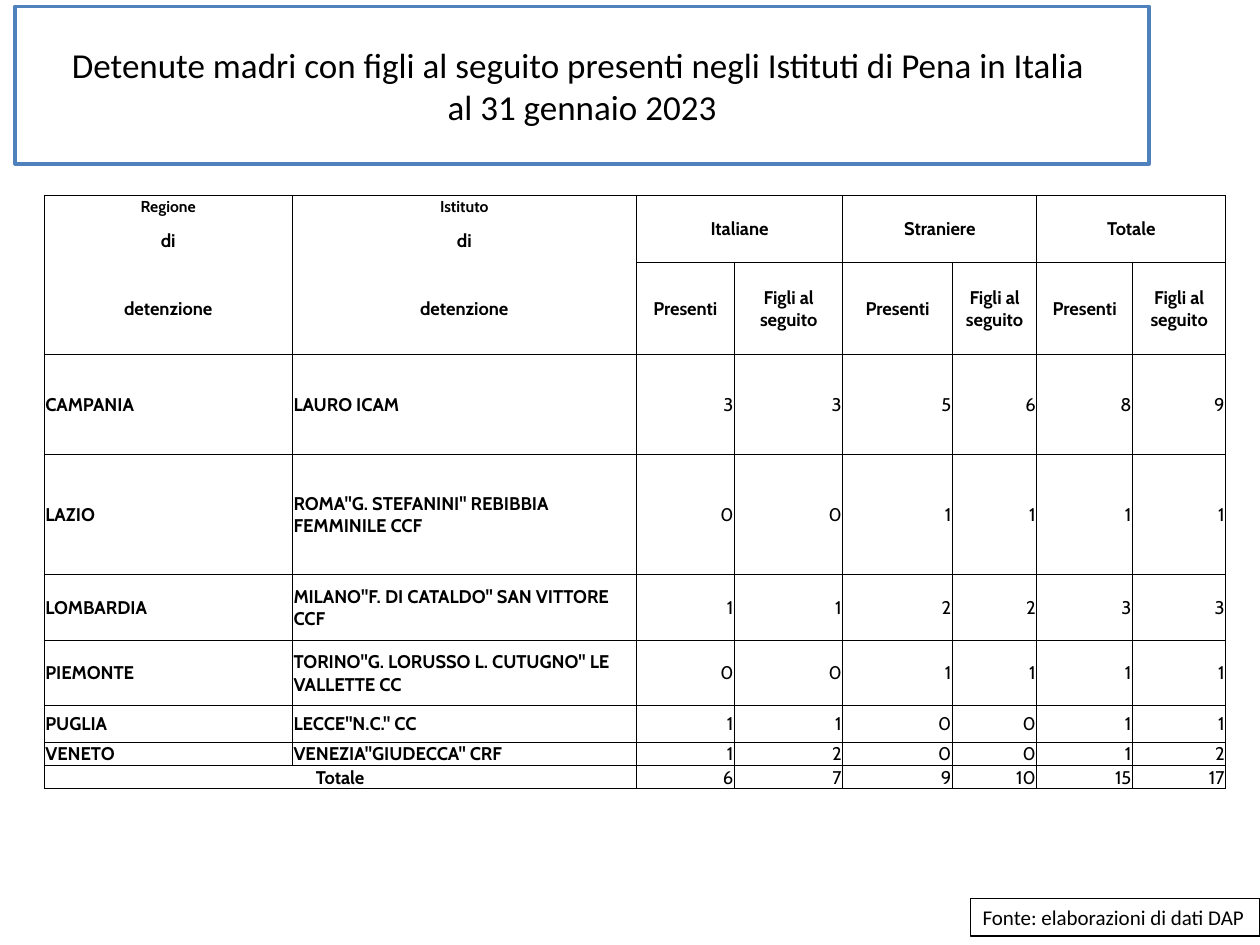
from typing import NamedTuple

from lxml import etree
from pptx import Presentation, util as u
from pptx.dml.color import RGBColor
from pptx.enum import text as t
from pptx.oxml import ns

LEFT, MID, RIGHT = t.PP_ALIGN.LEFT, t.PP_ALIGN.CENTER, t.PP_ALIGN.RIGHT
BLACK, WHITE, BLUE = "000000", "FFFFFF", "4F81BD"


class Box(NamedTuple):
    left: float
    top: float
    width: float
    height: float


class Prison(NamedTuple):
    region: str
    name: str
    counts: tuple


COLS = [1.97, 2.73, 0.78, 0.86, 0.87, 0.67, 0.76, 0.74]
ROWS = [0.18, 0.35, 0.73, 0.8, 0.95, 0.52, 0.52, 0.29, 0.18, 0.18]
GROUPS = ["Italiane", "Straniere", "Totale"]
PRISONS = [
    Prison("CAMPANIA", "LAURO ICAM", (3, 3, 5, 6, 8, 9)),
    Prison("LAZIO", 'ROMA"G. STEFANINI" REBIBBIA FEMMINILE CCF', (0, 0, 1, 1, 1, 1)),
    Prison("LOMBARDIA", 'MILANO"F. DI CATALDO" SAN VITTORE CCF', (1, 1, 2, 2, 3, 3)),
    Prison("PIEMONTE", 'TORINO"G. LORUSSO L. CUTUGNO" LE VALLETTE CC', (0, 0, 1, 1, 1, 1)),
    Prison("PUGLIA", 'LECCE"N.C." CC', (1, 1, 0, 0, 1, 1)),
    Prison("VENETO", 'VENEZIA"GIUDECCA" CRF', (1, 2, 0, 0, 1, 2)),
]
TOTALS = (6, 7, 9, 10, 15, 17)


def color(code: str) -> RGBColor:
    return RGBColor.from_string(code)


def write(frame, words: str, *, size: float, font: str = "Cabin",
          bold: bool = False, align=LEFT) -> None:
    para = frame.paragraphs[0]
    para.text = words
    para.alignment = align
    for run in para.runs:
        run.font.name = font
        run.font.size = u.Pt(size)
        run.font.bold = bold
        run.font.color.rgb = color(BLACK)


def panel(slide, box: Box, words: str, *, line: str, weight: float,
          wrap: bool, anchor, **style) -> None:
    shape = slide.shapes.add_textbox(*map(u.Inches, box))
    shape.fill.solid()
    shape.fill.fore_color.rgb = color(WHITE)
    shape.line.color.rgb = color(line)
    shape.line.width = u.Pt(weight)
    frame = shape.text_frame
    frame.word_wrap = wrap
    frame.vertical_anchor = anchor
    write(frame, words, font="Calibri", **style)


def border(cell, sides: str) -> None:
    props = cell._tc.get_or_add_tcPr()
    for side in "LRTB":
        line = etree.SubElement(props, ns.qn(f"a:ln{side}"), w=str(u.Pt(0.5)))
        if side in sides:
            fill = etree.SubElement(line, ns.qn("a:solidFill"))
            etree.SubElement(fill, ns.qn("a:srgbClr"), val=BLACK)
        else:
            etree.SubElement(line, ns.qn("a:noFill"))


def put(cell, words, *, size: float = 10.5, **style) -> None:
    write(cell.text_frame, str(words), size=size, **style)


def grid(slide, box: Box) -> None:
    frame = slide.shapes.add_table(len(ROWS), len(COLS), *map(u.Inches, box))
    table = frame.table
    table.first_row = table.horz_banding = False
    for col, width in zip(table.columns, COLS):
        col.width = u.Inches(width)
    for row, height in zip(table.rows, ROWS):
        row.height = u.Inches(height)

    # Borders and margins; the two stacked headings have no inner rules
    stack = ["LRT", "LR", "LRB"]
    for i in range(len(ROWS)):
        for j in range(len(COLS)):
            cell = table.cell(i, j)
            border(cell, stack[i] if i < 3 and j < 2 else "LRTB")
            cell.fill.background()
            cell.vertical_anchor = t.MSO_ANCHOR.MIDDLE
            cell.margin_left = cell.margin_right = u.Inches(0.01)
            cell.margin_top, cell.margin_bottom = u.Inches(0.01), 0

    # Headings
    for j, head in enumerate(["Regione", "Istituto"]):
        put(table.cell(0, j), head, size=9, bold=True, align=MID)
        for i, word in enumerate(["di", "detenzione"], 1):
            put(table.cell(i, j), word, bold=True, align=MID)
    for j, group in zip(range(2, len(COLS), 2), GROUPS):
        table.cell(0, j).merge(table.cell(1, j + 1))
        put(table.cell(0, j), group, bold=True, align=MID)
        for k, word in enumerate(["Presenti", "Figli al seguito"]):
            put(table.cell(2, j + k), word, bold=True, align=MID)

    # Prisons and totals
    for i, prison in enumerate(PRISONS, 3):
        put(table.cell(i, 0), prison.region, bold=True)
        put(table.cell(i, 1), prison.name, bold=True)
    last = len(ROWS) - 1
    table.cell(last, 0).merge(table.cell(last, 1))
    put(table.cell(last, 0), "Totale", bold=True, align=MID)
    for i, counts in enumerate([p.counts for p in PRISONS] + [TOTALS], 3):
        for j, count in enumerate(counts, 2):
            put(table.cell(i, j), count, align=RIGHT)


def main() -> None:
    deck = Presentation()
    deck.slide_width, deck.slide_height = u.Inches(10), u.Inches(7.5)
    slide = deck.slides.add_slide(deck.slide_layouts[6])

    # Title
    panel(slide, Box(0.12, 0.05, 9, 1.25),
          "Detenute madri con figli al seguito presenti negli Istituti di Pena"
          " in Italia \nal 31 gennaio 2023",
          line=BLUE, weight=2, wrap=True, anchor=t.MSO_ANCHOR.MIDDLE,
          size=20, align=MID)
    # Source note
    panel(slide, Box(7.7, 7.13, 2.3, 0.3), "Fonte: elaborazioni di dati DAP",
          line=BLACK, weight=0.75, wrap=False, anchor=t.MSO_ANCHOR.TOP, size=12)
    # Table
    grid(slide, Box(0.35, 1.55, sum(COLS), sum(ROWS)))

    deck.save("out.pptx")


if __name__ == "__main__":
    main()
